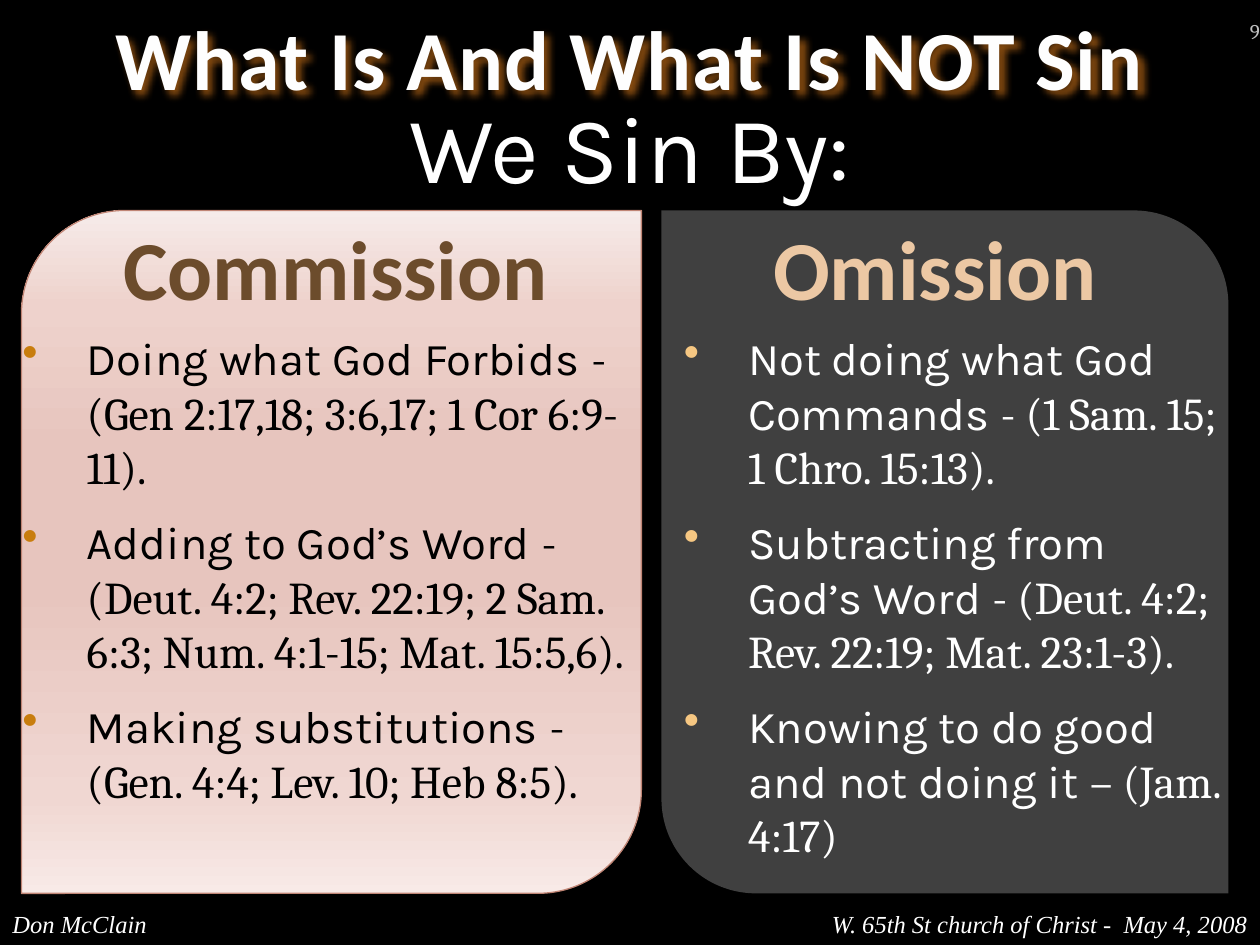
import pptx
import pptx.util
from lxml import etree
from pptx.dml.color import RGBColor
from pptx.enum.shapes import MSO_SHAPE
from pptx.enum.text import MSO_ANCHOR, MSO_AUTO_SIZE, PP_ALIGN
from pptx.oxml import parse_xml
from pptx.oxml.ns import nsdecls, qn
from pptx.util import Inches

BLACK = RGBColor(0x00, 0x00, 0x00)
WHITE = RGBColor(0xFF, 0xFF, 0xFF)
TITLE_WHITE = RGBColor(0xFE, 0xFE, 0xFE)
TITLE_EDGE = RGBColor(0xBD, 0x6A, 0x17)
CHARCOAL = RGBColor(0x40, 0x40, 0x40)
ROSE_LINE = RGBColor(0xC0, 0x85, 0x75)
BROWN = RGBColor(0x6C, 0x4C, 0x2C)
PEACH = RGBColor(0xEC, 0xC8, 0xA4)
AMBER = RGBColor(0xC8, 0x7D, 0x0E)
LIGHT_AMBER = RGBColor(0xF6, 0xC7, 0x82)
PAGE_GREY = RGBColor(0xBD, 0xBD, 0xBD)
ROSE_STOPS = [(0, "F8EAE7"), (14, "F0D7D2"), (45, "E7C5BE"),
              (65, "E7C5BE"), (86, "EED2CC"), (100, "F6EBE9")]


class SinSlide:
    heading_font, body_font, verse_font = "Calibri", "Karla", "Cambria"
    footer_font = "Times New Roman"
    body_size, indent = 26, Inches(0.51)

    def __init__(self, slide):
        self.slide = slide
        slide.background.fill.solid()
        slide.background.fill.fore_color.rgb = BLACK

    def add_shadow(self, properties, color, alpha, blur, distance, angle):
        for old in properties.findall(qn("a:effectLst")):
            properties.remove(old)
        properties.append(parse_xml(
            f'<a:effectLst {nsdecls("a")}><a:outerShdw blurRad="{pptx.util.Pt(blur)}" '
            f'dist="{pptx.util.Pt(distance)}" dir="{angle * 60000}" rotWithShape="0">'
            f'<a:srgbClr val="{color}"><a:alpha val="{alpha * 1000}"/></a:srgbClr>'
            '</a:outerShdw></a:effectLst>'))

    def panel(self, left, width, corners, alpha, blur, distance):
        panel = self.slide.shapes.add_shape(
            MSO_SHAPE.ROUND_2_DIAG_RECTANGLE, Inches(left), Inches(1.67),
            Inches(width), Inches(5.42))
        panel.adjustments[0], panel.adjustments[1] = corners
        panel.shadow.inherit = False
        panel.line.fill.background()
        self.add_shadow(panel._element.spPr, BLACK, alpha, blur, distance, 90)
        return panel

    def fill_gradient(self, panel, stops):
        stop_xml = "".join(f'<a:gs pos="{pos * 1000}"><a:srgbClr val="{color}"/></a:gs>'
                           for pos, color in stops)
        panel._element.spPr.find(qn("a:prstGeom")).addnext(parse_xml(
            f'<a:gradFill {nsdecls("a")} rotWithShape="1"><a:gsLst>{stop_xml}</a:gsLst>'
            '<a:lin ang="16200000" scaled="0"/></a:gradFill>'))

    def text_box(self, left, top, width, height, anchor=MSO_ANCHOR.TOP):
        box = self.slide.shapes.add_textbox(
            Inches(left), Inches(top), Inches(width), Inches(height))
        box.text_frame.word_wrap = True
        box.text_frame.vertical_anchor = anchor
        if anchor == MSO_ANCHOR.TOP:
            box.text_frame.auto_size = MSO_AUTO_SIZE.SHAPE_TO_FIT_TEXT
        return box

    def line(self, bounds, text, size, font, color, align=PP_ALIGN.CENTER,
             bold=False, italic=False, anchor=MSO_ANCHOR.TOP):
        box = self.text_box(*bounds, anchor=anchor)
        paragraph = box.text_frame.paragraphs[0]
        paragraph.text, paragraph.alignment = text, align
        paragraph.font.size, paragraph.font.name = pptx.util.Pt(size), font
        paragraph.font.bold, paragraph.font.italic = bold, italic
        paragraph.font.color.rgb = color
        return box

    def title(self, text):
        box = self.line((0, 0, 10, 0.91), text, 48, self.heading_font,
                        TITLE_WHITE, bold=True)
        run_properties = box.text_frame.paragraphs[0].runs[0]._r.get_or_add_rPr()
        run_properties.set("spc", "50")
        run_properties.append(parse_xml(
            f'<a:ln {nsdecls("a")} w="{pptx.util.Pt(1)}"><a:solidFill>'
            f'<a:srgbClr val="{TITLE_EDGE}"/></a:solidFill></a:ln>'))
        run_properties.append(parse_xml(
            f'<a:solidFill {nsdecls("a")}><a:srgbClr val="{TITLE_WHITE}"/></a:solidFill>'))
        self.add_shadow(box._element.spPr, TITLE_EDGE, 70, 4, 3, 45)

    def bullets(self, left, width, points, color, bullet_color):
        frame = self.text_box(left, 2.57, width, 4.43).text_frame
        for number, (statement, verses) in enumerate(points):
            paragraph = frame.add_paragraph() if number else frame.paragraphs[0]
            paragraph.space_before = pptx.util.Pt(0.45 * self.body_size)
            paragraph.font.size = pptx.util.Pt(self.body_size)
            paragraph.font.color.rgb = color
            for text, font in ((statement, self.body_font), (verses, self.verse_font)):
                run = paragraph.add_run()
                run.text, run.font.name = text, font
            properties = paragraph._p.get_or_add_pPr()
            properties.set("marL", str(self.indent))
            properties.set("indent", str(-self.indent))
            bullet = parse_xml(f'<a:buChar {nsdecls("a")} char="•"/>')
            properties.find(qn("a:defRPr")).addprevious(bullet)
            bullet_fill = etree.Element(qn("a:buClr"))
            etree.SubElement(bullet_fill, qn("a:srgbClr"), val=str(bullet_color))
            bullet.addprevious(bullet_fill)


def main():
    deck = pptx.Presentation()
    deck.slide_width, deck.slide_height = Inches(10), Inches(7.5)
    page = SinSlide(deck.slides.add_slide(deck.slide_layouts[6]))

    # Panels, rounded on opposite diagonals
    omission = page.panel(5.25, 4.5, (0, 0.1667), 32, 3.5, 2.2)
    omission.fill.solid()
    omission.fill.fore_color.rgb = CHARCOAL
    commission = page.panel(0.17, 4.92, (0.1667, 0), 43, 4, 2)
    page.fill_gradient(commission, ROSE_STOPS)
    commission.line.color.rgb = ROSE_LINE
    commission.line.width = pptx.util.Pt(0.75)

    # Footer and page number
    page.line((0, 7.17, 2.75, 0.33), "Don McClain", 14, page.footer_font, WHITE,
              PP_ALIGN.LEFT, italic=True, anchor=MSO_ANCHOR.BOTTOM)
    page.line((4.75, 7.17, 5.25, 0.33), "W. 65th St church of Christ -  May 4, 2008",
              14, page.footer_font, WHITE, PP_ALIGN.RIGHT, italic=True,
              anchor=MSO_ANCHOR.BOTTOM)
    page_number = page.line((9.17, 0, 0.83, 0.4), "9", 12, page.verse_font, PAGE_GREY,
                            PP_ALIGN.RIGHT, anchor=MSO_ANCHOR.BOTTOM)
    page_number.text_frame.margin_left = page_number.text_frame.margin_right = 0

    # Subtitle
    page.line((0, 0.66, 10, 1.01), "We Sin By:", 54, page.body_font, WHITE)

    # Points under each heading
    page.bullets(0.08, 5.08, [
        ("Doing what God Forbids ", "- (Gen 2:17,18; 3:6,17; 1 Cor 6:9-11)."),
        ("Adding to God’s Word ",
         "- (Deut. 4:2; Rev. 22:19; 2 Sam. 6:3; Num. 4:1-15; Mat. 15:5,6)."),
        ("Making substitutions ", "- (Gen. 4:4; Lev. 10; Heb 8:5)."),
    ], BLACK, AMBER)
    page.bullets(5.33, 4.5, [
        ("Not doing what God Commands ", "- (1 Sam. 15; 1 Chro. 15:13)."),
        ("Subtracting from God’s Word ", "- (Deut. 4:2; Rev. 22:19; Mat. 23:1-3)."),
        ("Knowing to do good and not doing it ", "– (Jam. 4:17)"),
    ], WHITE, LIGHT_AMBER)

    # Headings
    page.line((0.25, 1.67, 4.83, 0.91), "Commission", 48, page.heading_font, BROWN, bold=True)
    page.line((5.17, 1.67, 4.5, 0.91), "Omission", 48, page.heading_font, PEACH, bold=True)
    page.title("What Is And What Is NOT Sin")

    deck.save("out.pptx")


if __name__ == "__main__":
    main()
